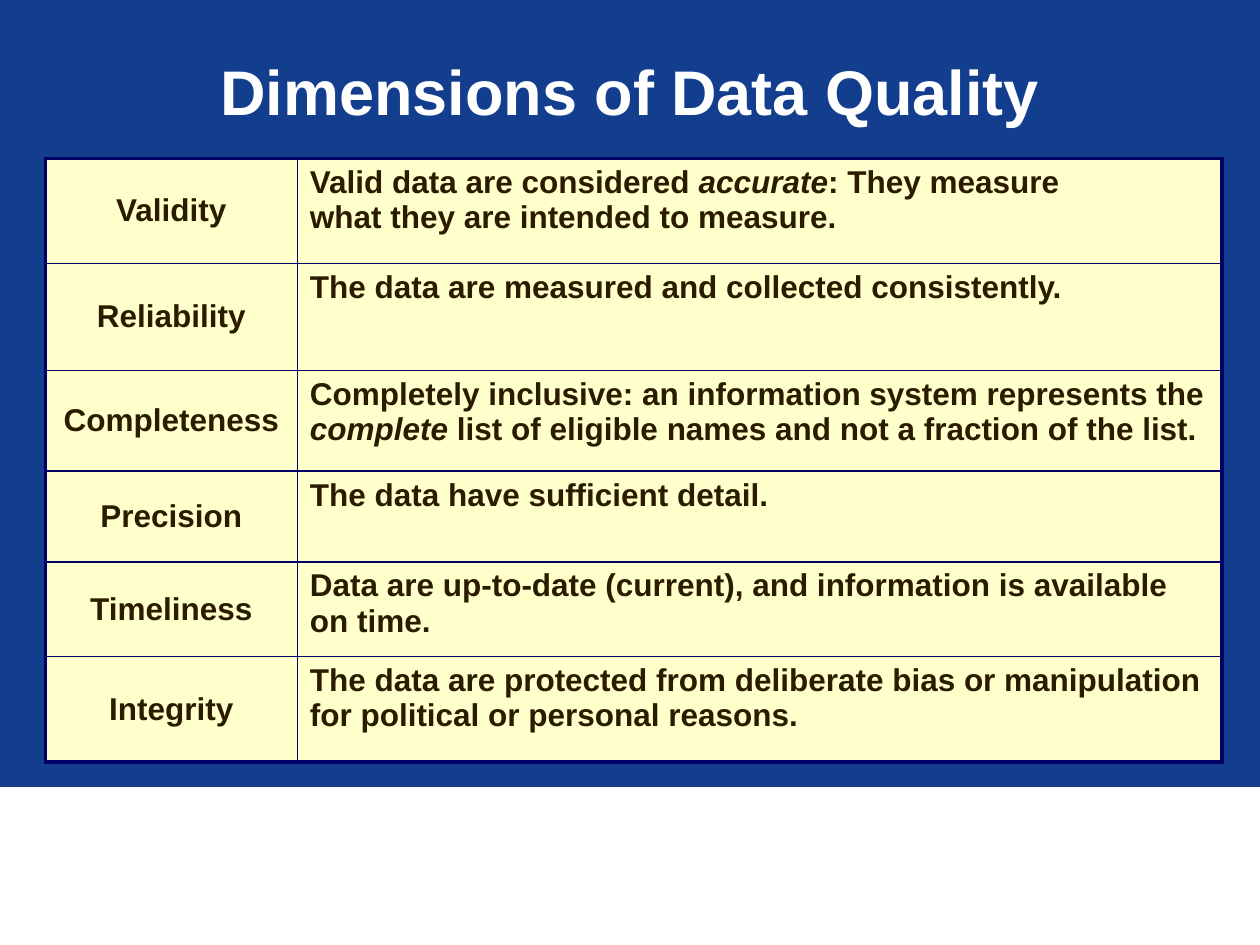
from lxml.etree import SubElement
from pptx import Presentation
from pptx.dml.color import RGBColor
from pptx.enum.shapes import MSO_SHAPE
from pptx.enum.text import MSO_ANCHOR, PP_ALIGN
from pptx.oxml.ns import qn
from pptx.util import Inches, Pt

BLUE = RGBColor(0x13, 0x3D, 0x8D)
NAVY = RGBColor(0x00, 0x00, 0x66)
CREAM = RGBColor(0xFF, 0xFF, 0xCC)
BROWN = RGBColor(0x2B, 0x1C, 0x00)
WHITE = RGBColor(0xFF, 0xFF, 0xFF)

WIDTH, HEIGHT = Inches(10), Inches(7.5)
COLS = (2, 7.34)
ROWS = (0.83, 0.85, 0.8, 0.72, 0.75, 0.84)
OUTER, INNER = Pt(2.25), Pt(1)

TITLE_FONT = {"name": "Arial", "size": Pt(36), "bold": True}
CELL_FONT = {"name": "Arial", "size": Pt(18), "bold": True}

DIMENSIONS = (
    ("Validity", "Valid data are considered *accurate*: They measure\n"
                 "what they are intended to measure."),
    ("Reliability", "The data are measured and collected consistently."),
    ("Completeness", "Completely inclusive: an information system represents the "
                     "*complete* list of eligible names and not a fraction of the list."),
    ("Precision", "The data have sufficient detail."),
    ("Timeliness", "Data are up-to-date (current), and information is available on time."),
    ("Integrity", "The data are protected from deliberate bias or manipulation "
                  "for political or personal reasons."),
)


def format_font(font, values, color):
    for name, value in values.items():
        setattr(font, name, value)
    font.color.rgb = color


def add_title(s, text):
    sp = s.shapes.title
    box = {"left": 0.05 * WIDTH, "top": HEIGHT / 30, "width": 0.9 * WIDTH, "height": HEIGHT / 8}
    for name, value in box.items():
        setattr(sp, name, int(value))
    tf = sp.text_frame
    tf.vertical_anchor = MSO_ANCHOR.MIDDLE
    p = tf.paragraphs[0]
    p.alignment = PP_ALIGN.CENTER
    r = p.add_run()
    r.text = text
    format_font(r.font, TITLE_FONT, WHITE)


def add_footer_band(s):
    top = int(HEIGHT * 5 / 6)
    sp = s.shapes.add_shape(MSO_SHAPE.RECTANGLE, 0, top, WIDTH, HEIGHT - top)
    sp.shadow.inherit = False
    sp.fill.solid()
    sp.fill.fore_color.rgb = WHITE
    sp.line.color.rgb = WHITE
    sp.line.width = Pt(0.75)


def set_borders(cell, row, col):
    on_edge = {
        "L": col == 0,
        "R": col == len(COLS) - 1,
        "T": row == 0,
        "B": row == len(ROWS) - 1,
    }
    tc_pr = cell._tc.get_or_add_tcPr()
    for side, outer in on_edge.items():
        ln = SubElement(tc_pr, qn(f"a:ln{side}"), w=str(OUTER if outer else INNER))
        SubElement(SubElement(ln, qn("a:solidFill")), qn("a:srgbClr"), val=str(NAVY))


def write_cell(cell, text):
    p = cell.text_frame.paragraphs[0]
    for i, part in enumerate(text.split("*")):
        for j, line in enumerate(part.split("\n")):
            if j:
                p.add_line_break()
            r = p.add_run()
            r.text = line
            format_font(r.font, CELL_FONT, BROWN)
            r.font.italic = i % 2 == 1
    return p


def add_dimension_table(s):
    frame = s.shapes.add_table(len(ROWS), len(COLS), Inches(0.36), Inches(1.26),
                               Inches(sum(COLS)), Inches(sum(ROWS)))
    table = frame.table
    table.first_row = table.horz_banding = False
    for column, width in zip(table.columns, COLS):
        column.width = Inches(width)
    for i, (row, height) in enumerate(zip(table.rows, ROWS)):
        row.height = Inches(height)
        for j, cell in enumerate(row.cells):
            set_borders(cell, i, j)
            cell.fill.solid()
            cell.fill.fore_color.rgb = CREAM
            p = write_cell(cell, DIMENSIONS[i][j])
            p.alignment = PP_ALIGN.LEFT if j else PP_ALIGN.CENTER
            cell.vertical_anchor = MSO_ANCHOR.TOP if j else MSO_ANCHOR.MIDDLE


def main():
    prs = Presentation()
    prs.slide_width, prs.slide_height = WIDTH, HEIGHT
    s = prs.slides.add_slide(prs.slide_layouts[5])
    s.background.fill.solid()
    s.background.fill.fore_color.rgb = BLUE
    add_footer_band(s)
    add_dimension_table(s)
    add_title(s, "Dimensions of Data Quality")
    prs.save("out.pptx")


if __name__ == "__main__":
    main()
